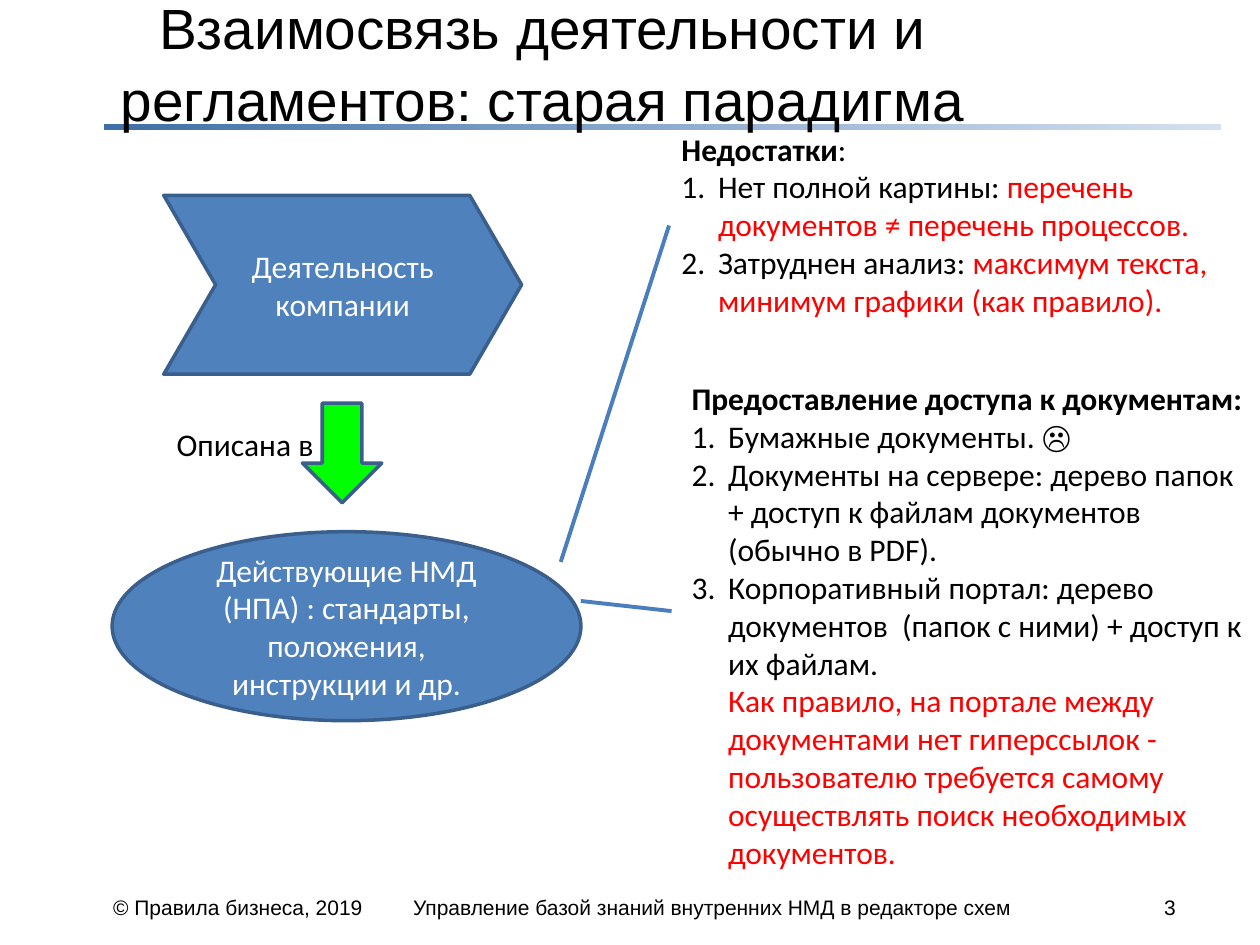
from dataclasses import dataclass

import pptx
import pptx.dml.color
import pptx.enum.shapes
import pptx.enum.text
import pptx.oxml.ns
import pptx.util
from lxml import etree

Inches = pptx.util.Inches
Pt = pptx.util.Pt
RGBColor = pptx.dml.color.RGBColor
MSO_SHAPE = pptx.enum.shapes.MSO_SHAPE
PP_ALIGN = pptx.enum.text.PP_ALIGN
MSO_ANCHOR = pptx.enum.text.MSO_ANCHOR
qn = pptx.oxml.ns.qn

BLACK = RGBColor(0x00, 0x00, 0x00)
WHITE = RGBColor(0xFF, 0xFF, 0xFF)
RED = RGBColor(0xFF, 0x00, 0x00)
GREEN = RGBColor(0x00, 0xFF, 0x00)
BLUE = RGBColor(0x4F, 0x81, 0xBD)
RULE_BLUE = RGBColor(0x3E, 0x6F, 0xA6)
OUTLINE = RGBColor(0x3A, 0x5F, 0x8C)
LINK_BLUE = RGBColor(0x4B, 0x7E, 0xBC)
LIST_INDENT = Inches(0.29)


@dataclass
class Box:
    left: float
    top: float
    width: float
    height: float

    def emu(self) -> list:
        return [Inches(v) for v in (self.left, self.top, self.width, self.height)]


@dataclass
class Run:
    text: str
    color: RGBColor = BLACK
    bold: bool = False


@dataclass
class Para:
    runs: list[Run]
    numbered: bool = False
    indented: bool = False


@dataclass
class Block:
    shape: MSO_SHAPE
    box: Box
    fill: RGBColor
    text: str = ""
    rotation: int = 0


def set_text(sp, text: str, size: float, font: str, color: RGBColor, centred: bool = False) -> None:
    tf = sp.text_frame
    tf.word_wrap = True
    tf.text = text
    if centred:
        tf.vertical_anchor = MSO_ANCHOR.MIDDLE
    for p in tf.paragraphs:
        p.alignment = PP_ALIGN.CENTER if centred else PP_ALIGN.LEFT
        for r in p.runs:
            r.font.size, r.font.name = Pt(size), font
            r.font.color.rgb = color


def add_label(s, box: Box, text: str, size: float, font: str, centred: bool = False):
    sp = s.shapes.add_textbox(*box.emu())
    set_text(sp, text, size, font, BLACK, centred)
    return sp


def add_block(s, block: Block):
    sp = s.shapes.add_shape(block.shape, *block.box.emu())
    sp.shadow.inherit = False
    sp.fill.solid()
    sp.fill.fore_color.rgb = block.fill
    sp.line.color.rgb = OUTLINE
    sp.line.width = Pt(2)
    sp.rotation = block.rotation
    if block.text:
        set_text(sp, block.text, 18, "Calibri", WHITE, centred=True)
    return sp


def add_list(s, box: Box, paras: list[Para]) -> None:
    tf = s.shapes.add_textbox(*box.emu()).text_frame
    tf.word_wrap = True
    for i, para in enumerate(paras):
        p = tf.paragraphs[0] if i == 0 else tf.add_paragraph()
        pPr = p._p.get_or_add_pPr()
        if para.numbered or para.indented:
            pPr.set("marL", str(LIST_INDENT))
            pPr.set("indent", str(-LIST_INDENT if para.numbered else 0))
        if para.numbered:
            etree.SubElement(pPr, qn("a:buFont"), typeface="+mj-lt")
            etree.SubElement(pPr, qn("a:buAutoNum"), type="arabicPeriod")
        for run in para.runs:
            r = p.add_run()
            r.text = run.text
            r.font.size, r.font.name, r.font.bold = Pt(18), "Calibri", run.bold
            r.font.color.rgb = run.color


def add_line(s, x1: float, y1: float, x2: float, y2: float) -> None:
    ends = [Inches(v) for v in (x1, y1, x2, y2)]
    cxn = s.shapes.add_connector(pptx.enum.shapes.MSO_CONNECTOR.STRAIGHT, *ends)
    cxn.line.color.rgb = LINK_BLUE
    cxn.line.width = Pt(2.25)
    etree.SubElement(cxn._element.spPr, qn("a:effectLst"))


def add_title_rule(s) -> None:
    sp = s.shapes.add_shape(MSO_SHAPE.RECTANGLE, *Box(0.83, 0.99, 8.86, 0.04).emu())
    sp.shadow.inherit = False
    sp.line.fill.background()
    sp.fill.gradient()
    sp.fill.gradient_angle = 0
    for stop, color, position in zip(sp.fill.gradient_stops, (RULE_BLUE, BLUE), (0, 1)):
        stop.color.rgb = color
        stop.position = position
    # The right end fades to 24 % opacity
    last = sp._element.spPr.findall(".//" + qn("a:srgbClr"))[-1]
    etree.SubElement(last, qn("a:alpha"), val="24000")


FOOTERS = [
    (Box(0.8, 7.05, 2.44, 0.4), "© Правила бизнеса, 2019"),
    (Box(3.18, 7.05, 5.59, 0.4), "Управление базой знаний внутренних НМД в редакторе схем"),
    (Box(9.14, 7.05, 0.51, 0.4), "3"),
]
ACTIVITY = Block(MSO_SHAPE.CHEVRON, Box(1.3, 1.55, 2.84, 1.42), BLUE, "Деятельность компании")
DOCUMENTS = Block(MSO_SHAPE.OVAL, Box(0.89, 4.22, 3.72, 1.5), BLUE,
                  "Действующие НМД (НПА) : стандарты, положения, инструкции и др.")
ARROW = Block(MSO_SHAPE.UP_ARROW, Box(2.4, 3.2, 0.63, 0.79), GREEN, rotation=180)

DRAWBACKS = [
    Para([Run("Недостатки", bold=True), Run(":")]),
    Para([Run("Нет полной картины: "),
          Run("перечень документов ≠ перечень процессов.", RED)], numbered=True),
    Para([Run("Затруднен анализ: "),
          Run("максимум текста, минимум графики (как правило).", RED)], numbered=True),
]
ACCESS = [
    Para([Run("Предоставление доступа к документам:", bold=True)]),
    Para([Run("Бумажные документы. ☹")], numbered=True),
    Para([Run("Документы на сервере: дерево папок + доступ к файлам документов "
              "(обычно в PDF).")], numbered=True),
    Para([Run("Корпоративный портал: дерево документов  (папок с ними) + доступ "
              "к их файлам.")], numbered=True),
    Para([Run("Как правило, на портале между документами нет гиперссылок - пользователю "
              "требуется самому осуществлять поиск необходимых документов.", RED)],
         indented=True),
]


def main() -> None:
    prs = pptx.Presentation()
    prs.slide_width, prs.slide_height = Inches(10), Inches(7.5)
    s = prs.slides.add_slide(prs.slide_layouts[6])

    # Rule, footer and title
    add_title_rule(s)
    for box, text in FOOTERS:
        add_label(s, box, text, 12, "Arial")
    title = add_label(s, Box(0.85, 0.05, 6.91, 0.87),
                      "Взаимосвязь деятельности и\vрегламентов: старая парадигма",
                      32.4, "Arial", centred=True)
    title.text_frame.margin_left = title.text_frame.margin_right = 0
    title.text_frame.paragraphs[0].line_spacing = 1.05

    # Activity described in documents
    chevron = add_block(s, ACTIVITY)
    chevron.adjustments[0] = 0.29
    add_block(s, DOCUMENTS)
    add_block(s, ARROW)
    add_label(s, Box(0.98, 3.12, 1.93, 0.8), "Описана в", 18, "Calibri", centred=True)

    # Remarks and the lines leading to them
    add_line(s, 4.45, 4.46, 5.31, 1.79)
    add_list(s, Box(5.31, 0.98, 4.65, 1.62), DRAWBACKS)
    add_list(s, Box(5.39, 2.96, 4.65, 4.04), ACCESS)
    add_line(s, 4.61, 4.77, 5.33, 4.85)

    prs.save("out.pptx")


if __name__ == "__main__":
    main()
